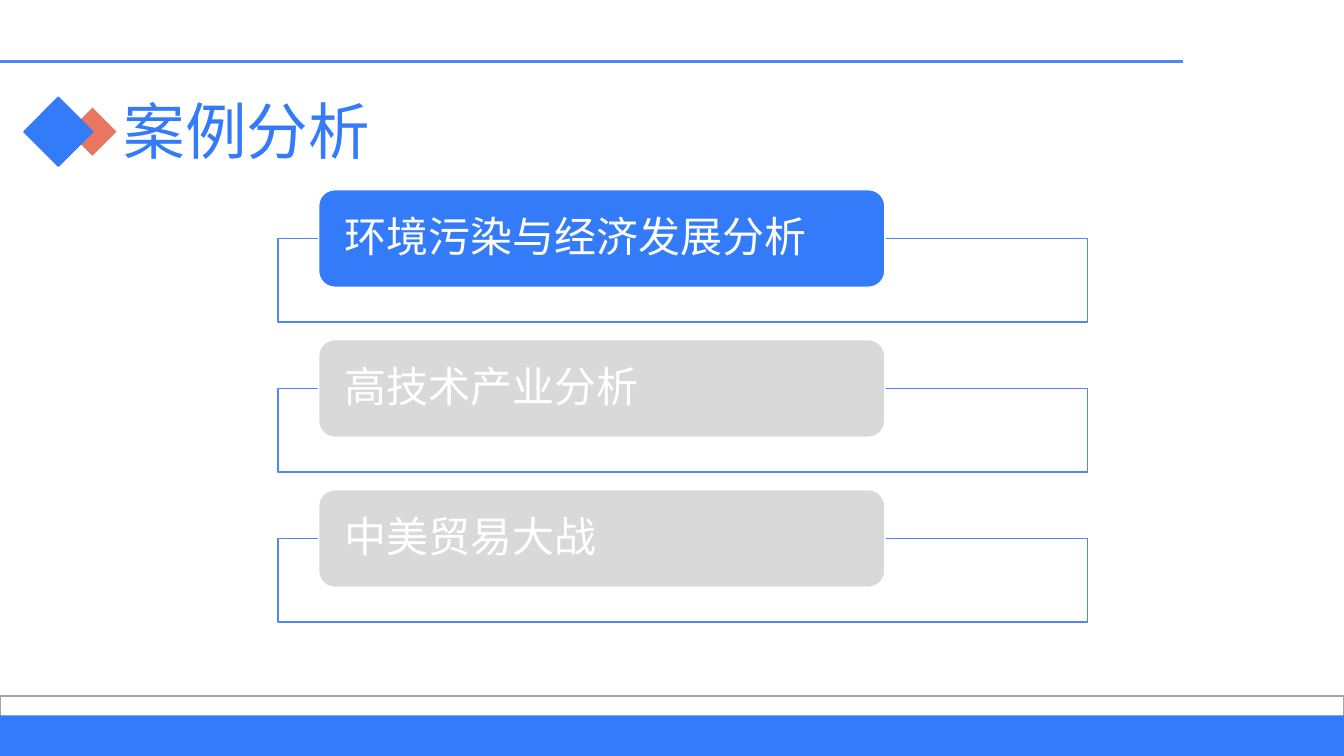
from pptx import Presentation
from pptx.dml.color import RGBColor as RGB
from pptx.enum.shapes import MSO_CONNECTOR as Conn, MSO_SHAPE as Kind
from pptx.enum.text import MSO_ANCHOR as Anchor, PP_ALIGN as Align
from pptx.oxml.ns import qn
from pptx.util import Cm, Pt
from lxml.etree import SubElement as Sub

BLUE = RGB(0x34, 0x7B, 0xF9)
EDGE = RGB(0x4F, 0x86, 0xF9)
CORAL = RGB(0xE8, 0x76, 0x60)
GREY = RGB(0xD9, 0xD9, 0xD9)
RULE = RGB(0xA5, 0xA5, 0xA5)
WHITE = RGB(0xFF, 0xFF, 0xFF)

WIDE, HIGH = 33.87, 19.05


class Deck:
    """Holds the text style and the current slide."""

    frame = {"word_wrap": True, "vertical_anchor": Anchor.MIDDLE}
    para = {"alignment": Align.LEFT, "line_spacing": 0.9}

    def __init__(self):
        self.show = Presentation()
        self.show.slide_width, self.show.slide_height = Cm(WIDE), Cm(HIGH)
        self.slide = self.show.slides.add_slide(self.show.slide_layouts[6])

    def shape(self, kind, box, fill, line=None, width=1, alpha=None):
        item = self.slide.shapes.add_shape(kind, *map(Cm, box))
        item.shadow.inherit = False
        item.fill.solid()
        item.fill.fore_color.rgb = fill
        if alpha:
            tint = item.fill._xPr.find(qn("a:solidFill"))[0]
            Sub(tint, qn("a:alpha")).set("val", str(alpha * 1000))
        if line is None:
            item.line.fill.background()
        else:
            item.line.color.rgb = line
            item.line.width = Pt(width)
        return item

    def line(self, start, end, color, width):
        item = self.slide.shapes.add_connector(
            Conn.STRAIGHT, *map(Cm, start + end))
        Sub(item._element.spPr, qn("a:effectLst"))
        item.line.color.rgb = color
        item.line.width = Pt(width)

    def text(self, item, words, size, face, color, inset):
        frame = item.text_frame
        para = frame.paragraphs[0]
        run = para.add_run()
        run.text = words
        run.font.color.rgb = color
        edge = {"margin_left": Cm(inset), "margin_right": Cm(inset),
                "margin_top": 0, "margin_bottom": 0}
        font = {"size": Pt(size), "name": face}
        for part, style in ((frame, self.frame), (frame, edge),
                            (para, self.para), (run.font, font)):
            for key, value in style.items():
                setattr(part, key, value)

    def title(self, box, words):
        item = self.slide.shapes.add_textbox(*map(Cm, box))
        self.text(item, words, 44, "Montserrat", BLUE, 0.25)


def main():
    deck = Deck()

    # Footer bands and top rule
    deck.shape(Kind.RECTANGLE, (0, 17.53, WIDE, 1.52), WHITE, RULE, 1.5)
    deck.shape(Kind.RECTANGLE, (0, 18.03, WIDE, 1.02), BLUE)
    deck.line((0, 1.55), (29.81, 1.55), EDGE, 2.25)

    # Title with its diamonds
    deck.shape(Kind.DIAMOND, (1.68, 2.67, 1.3, 1.3), CORAL, WHITE, 1.5)
    deck.shape(Kind.DIAMOND, (0.6, 2.45, 1.74, 1.74), BLUE, BLUE)
    deck.title((2.87, 2.06, 28.65, 2.64), "案例分析")

    # Topic list, the current one in blue
    topics = (("环境污染与经济发展分析", BLUE),
              ("高技术产业分析", GREY),
              ("中美贸易大战", GREY))
    top, step = 4.78, 3.78
    for row, (words, fill) in enumerate(topics):
        y = top + row * step
        deck.shape(Kind.RECTANGLE, (7.01, y + 1.23, 20.4, 2.11),
                   WHITE, EDGE, alpha=90)
        tab = deck.shape(Kind.ROUNDED_RECTANGLE, (8.03, y, 14.27, 2.46),
                         fill, WHITE)
        deck.text(tab, words, 30, "Arial", WHITE, 0.53)

    deck.show.save("out.pptx")


if __name__ == "__main__":
    main()
